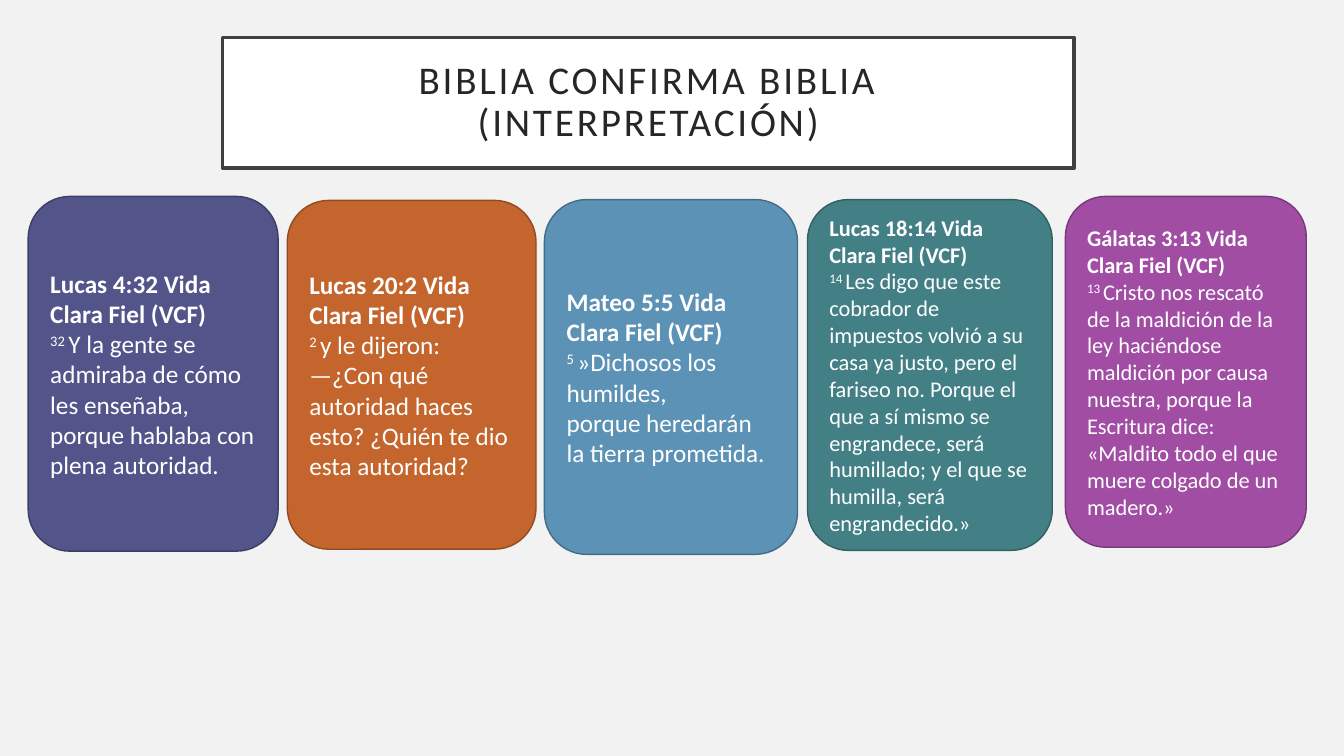
import pptx
import pptx.util
import pptx.dml.color
import pptx.enum.shapes
import pptx.enum.text

Cm, Pt = pptx.util.Cm, pptx.util.Pt
SHAPE = pptx.enum.shapes.MSO_SHAPE
ALIGN = pptx.enum.text.PP_ALIGN
FONT = "Calibri"

# Content
TITLE = "BIBLIA CONFIRMA BIBLIA\n(INTERPRETACIÓN)"
TITLE_BOX = (5.61, 0.94, 21.46, 3.3)
VERSION = "Vida Clara Fiel (VCF)"

# Passage, verse number, paragraphs, text size, fill, line, box in cm
VERSES = [
    ("Lucas 4:32", "32",
     ["Y la gente se admiraba de cómo les enseñaba, porque hablaba con plena autoridad."],
     18, "53548A", "3D3E66", (0.71, 4.95, 6.3, 8.94)),
    ("Lucas 20:2", "2",
     ["y le dijeron:",
      "—¿Con qué autoridad haces esto? ¿Quién te dio esta autoridad?"],
     18, "C4652D", "914B21", (7.24, 5.05, 6.27, 8.79)),
    ("Mateo 5:5", "5",
     ["»Dichosos los humildes,\nporque heredarán la tierra prometida."],
     18, "5C92B5", "446C86", (13.72, 5.03, 6.38, 8.94)),
    ("Lucas 18:14", "14",
     ["Les digo que este cobrador de impuestos volvió a su casa ya justo, "
      "pero el fariseo no. Porque el que a sí mismo se engrandece, será "
      "humillado; y el que se humilla, será engrandecido.»"],
     16, "438086", "325F63", (20.35, 5.03, 6.17, 8.84)),
    ("Gálatas 3:13", "13",
     ["Cristo nos rescató de la maldición de la ley haciéndose maldición por "
      "causa nuestra, porque la Escritura dice: «Maldito todo el que muere "
      "colgado de un madero.»"],
     16, "A04DA3", "763979", (26.85, 4.95, 6.07, 8.84)),
]


def rgb(code):
    return pptx.dml.color.RGBColor.from_string(code)


def add_text(p, text, size=18, color="FFFFFF", bold=False, raised=False, spacing=None):
    for i, line in enumerate(text.split("\n")):
        if i:
            p.add_line_break()
        r = p.add_run()
        r.text = line
        r.font.name, r.font.size, r.font.bold = FONT, Pt(size), bold
        r.font.color.rgb = rgb(color)
        if raised:
            r.font._element.set("baseline", "30000")
        if spacing:
            r.font._element.set("spc", str(spacing * 100))


def add_box(s, kind, box, fill, line, width):
    sp = s.shapes.add_shape(kind, *map(Cm, box))
    sp.shadow.inherit = False
    sp.fill.solid()
    sp.fill.fore_color.rgb = rgb(fill)
    sp.line.color.rgb = rgb(line)
    sp.line.width = Pt(width)
    tf = sp.text_frame
    tf.word_wrap = True
    tf.vertical_anchor = pptx.enum.text.MSO_ANCHOR.MIDDLE
    return tf


# Slide
prs = pptx.Presentation()
prs.slide_width, prs.slide_height = Cm(33.87), Cm(19.05)
s = prs.slides.add_slide(prs.slide_layouts[6])
s.background.fill.solid()
s.background.fill.fore_color.rgb = rgb("F2F2F2")

# Title
tf = add_box(s, SHAPE.RECTANGLE, TITLE_BOX, "FFFFFF", "404040", 2.5)
tf.margin_left = tf.margin_right = tf.margin_top = tf.margin_bottom = Cm(0.51)
p = tf.paragraphs[0]
p.alignment, p.line_spacing = ALIGN.CENTER, 0.9
add_text(p, TITLE, size=28, color="262626", spacing=2)

# Verse cards
for passage, number, paragraphs, size, fill, line, box in VERSES:
    tf = add_box(s, SHAPE.ROUNDED_RECTANGLE, box, fill, line, 1)
    add_text(tf.paragraphs[0], f"{passage} {VERSION}", size=size, bold=True)
    for i, text in enumerate(paragraphs):
        p = tf.add_paragraph()
        if i == 0:
            add_text(p, number + " ", size=size, raised=True)
        add_text(p, text, size=size)
    for p in tf.paragraphs:
        p.alignment = ALIGN.LEFT

prs.save("out.pptx")
